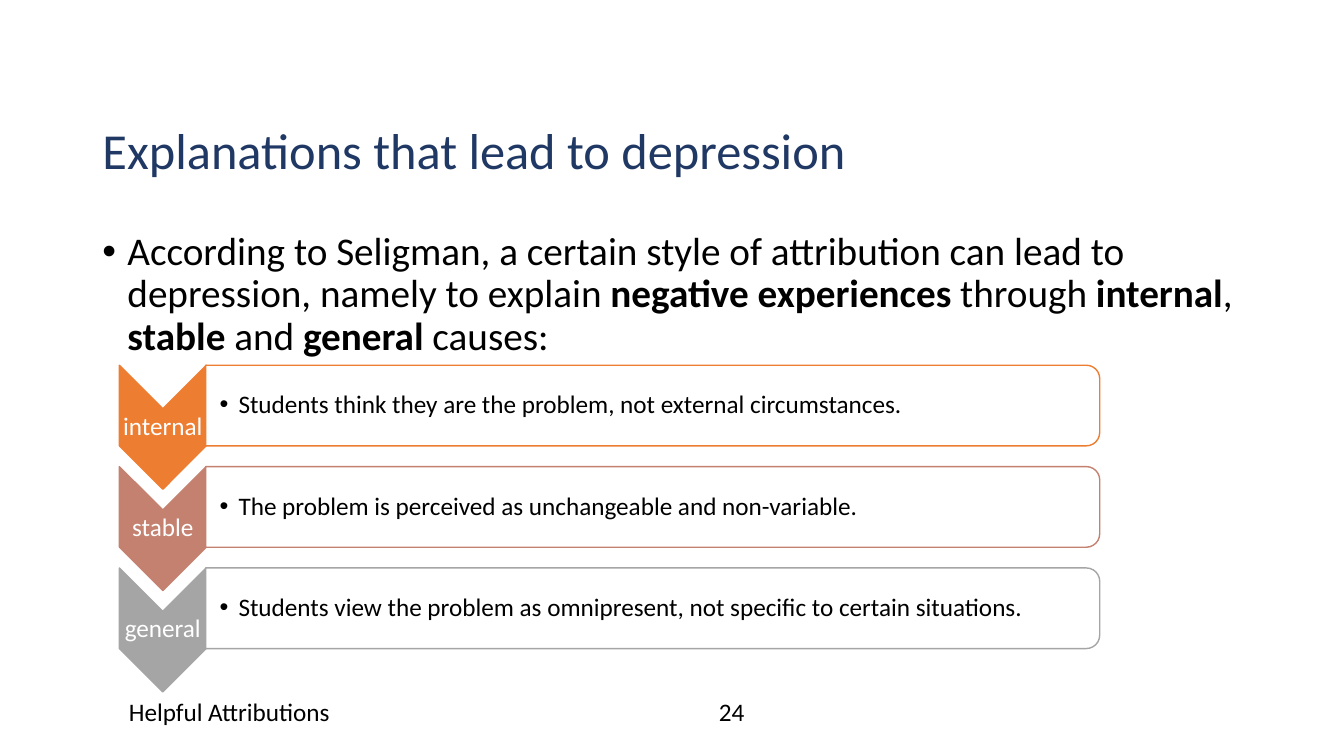
from dataclasses import dataclass
from lxml.etree import SubElement
from pptx import Presentation
from pptx.dml.color import RGBColor
from pptx.enum.shapes import MSO_SHAPE as Kind
from pptx.enum.text import MSO_ANCHOR as Anchor, MSO_AUTO_SIZE as Fit, PP_ALIGN as Align
from pptx.oxml.ns import qn
from pptx.util import Pt


@dataclass
class Box:
    left: float
    top: float
    width: float
    height: float

    def place(self) -> list:
        return [Pt(v) for v in (self.left, self.top, self.width, self.height)]


@dataclass
class Step:
    label: str
    note: str
    color: str


@dataclass
class Style:
    size: float
    color: str = "000000"
    align: Align = Align.LEFT
    anchor: Anchor = Anchor.TOP
    pads: tuple = (7.2, 3.6, 7.2, 3.6)
    space: float = 1.0
    indent: float = 0


STEPS = [
    Step("internal", "Students think they are the problem, not external circumstances.", "ED7D31"),
    Step("stable", "The problem is perceived as unchangeable and non-variable.", "C48170"),
    Step("general", "Students view the problem as omnipresent, not specific to certain situations.", "A5A5A5"),
]
INTRO = [
    ("According to Seligman, a certain style of attribution can lead to depression, namely to explain ", False),
    ("negative experiences ", True), ("through ", False), ("internal", True), (", ", False),
    ("stable", True), (" and ", False), ("general", True), (" causes:", False),
]
PITCH = 72.4
TITLE = Style(36, "203864", space=0.9)
BODY = Style(28, space=0.9, indent=18)
LABEL = Style(18, "FFFFFF", Align.CENTER, Anchor.MIDDLE, (0.7,) * 4, 0.9)
NOTE = Style(18, anchor=Anchor.MIDDLE, pads=(10, 0.7, 0.7, 0.7), space=0.9, indent=13.5)


def paint(target, color: str) -> None:
    target.rgb = RGBColor.from_string(color)


def assign(target, values: dict) -> None:
    for name, value in values.items():
        setattr(target, name, value)


def write(frame, runs: list, style: Style) -> None:
    sides = ("margin_left", "margin_top", "margin_right", "margin_bottom")
    pads = {side: Pt(pad) for side, pad in zip(sides, style.pads)}
    assign(frame, {"word_wrap": True, "auto_size": Fit.NONE,
                   "vertical_anchor": style.anchor, **pads})
    para = frame.paragraphs[0]
    assign(para, {"alignment": style.align, "line_spacing": style.space})
    if style.indent:
        props = para._p.get_or_add_pPr()
        props.set("marL", str(Pt(style.indent)))
        props.set("indent", str(-Pt(style.indent)))
        SubElement(props, qn("a:buFont")).set("typeface", "Arial")
        SubElement(props, qn("a:buChar")).set("char", "•")
    for text, bold in runs:
        run = para.add_run()
        run.text = text
        assign(run.font, {"name": "Calibri", "size": Pt(style.size), "bold": bold})
        paint(run.font.color, style.color)


def add_text(slide, box: Box, runs: list, style: Style) -> None:
    write(slide.shapes.add_textbox(*box.place()).text_frame, runs, style)


def add_turned(slide, kind: Kind, mid: tuple, size: tuple, fill: str, line: str) -> None:
    (x, y), (width, height) = mid, size
    box = Box(x - width / 2, y - height / 2, width, height)
    shape = slide.shapes.add_shape(kind, *box.place())
    shape.rotation = 90
    shape.shadow.inherit = False
    shape.fill.solid()
    paint(shape.fill.fore_color, fill)
    paint(shape.line.color, line)
    shape.line.width = Pt(1)


def add_step(slide, step: Step, shift: float) -> None:
    add_turned(slide, Kind.CHEVRON, (116.3, 305.2 + shift), (88.5, 62), step.color, step.color)
    add_text(slide, Box(85.3, 291.7 + shift, 62, 26.6), [(step.label, False)], LABEL)
    add_turned(slide, Kind.ROUND_2_SAME_RECTANGLE, (466.2, 289.7 + shift), (57.6, 638.6),
               "FFFFFF", step.color)
    add_text(slide, Box(146.9, 263.7 + shift, 635.8, 52), [(step.note, False)], NOTE)


def main() -> None:
    deck = Presentation()
    assign(deck, {"slide_width": Pt(960), "slide_height": Pt(540)})
    slide = deck.slides.add_slide(deck.slide_layouts[5])
    title = slide.shapes.title
    assign(title, dict(zip(("left", "top", "width", "height"), Box(66, 86.4, 828, 70).place())))
    write(title.text_frame, [("Explanations that lead to depression", False)], TITLE)
    add_text(slide, Box(66, 162, 828, 324.7), INTRO, BODY)
    add_text(slide, Box(85, 494, 324, 29), [("Helpful Attributions", False)], Style(18))
    add_text(slide, Box(414.7, 494, 216, 29), [("24", False)], Style(18, align=Align.CENTER))
    for index, step in enumerate(STEPS):
        add_step(slide, step, index * PITCH)
    deck.save("out.pptx")


if __name__ == "__main__":
    main()
